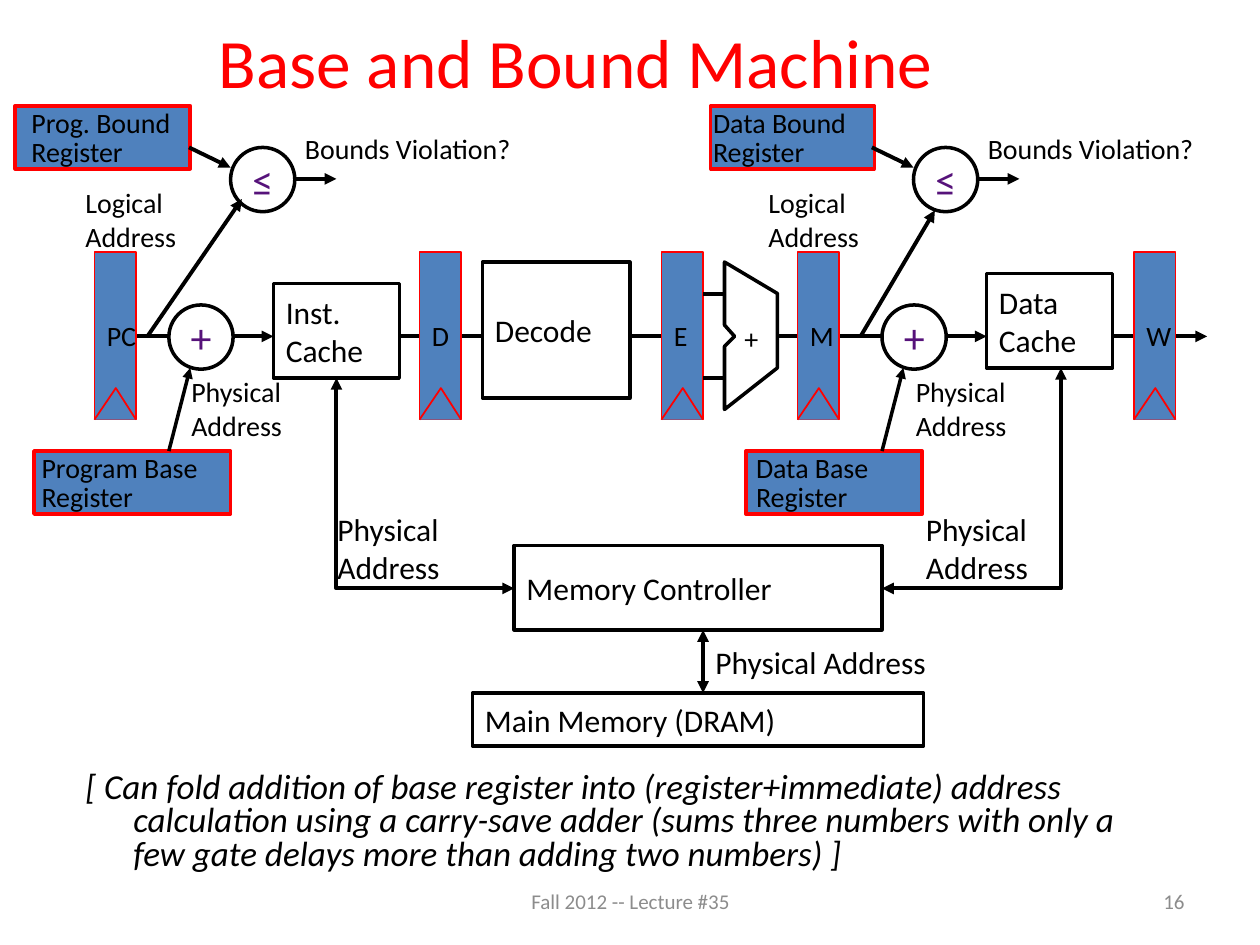
import pptx
import pptx.util
import pptx.dml.color
import pptx.enum.shapes
import pptx.enum.text
import pptx.oxml
import pptx.oxml.ns

Inches = pptx.util.Inches
Pt = pptx.util.Pt
KIND = pptx.enum.shapes.MSO_SHAPE
ANCHOR = pptx.enum.text.MSO_ANCHOR
ALIGN = pptx.enum.text.PP_ALIGN
BLACK, WHITE, RED, BLUE = "000000", "FFFFFF", "FF0000", "4F81BD"
PURPLE, GRAY = "56127A", "8C8C8C"


def color(code):
    return pptx.dml.color.RGBColor.from_string(code)


def write(shape, text, size, ink=BLACK, wrap=True, align=ALIGN.LEFT, anchor=ANCHOR.MIDDLE):
    frame = shape.text_frame
    frame.text = text
    frame.word_wrap = wrap
    frame.vertical_anchor = anchor
    para = frame.paragraphs[0]
    para.alignment = align
    font = para.runs[0].font
    font.name, font.size = "Calibri", Pt(size)
    font.color.rgb = color(ink)
    return para


def paint(shape, fill, line, width):
    shape.shadow.inherit = False
    if fill:
        shape.fill.solid()
        shape.fill.fore_color.rgb = color(fill)
    else:
        shape.fill.background()
    shape.line.color.rgb = color(line)
    shape.line.width = Pt(width)
    return shape


def area(box):
    return [Inches(n) for n in box]


def label(slide, box, text, size=16, **style):
    return write(slide.shapes.add_textbox(*area(box)), text, size, **style)


def tight(slide, box, text, wrap=True):
    shape = slide.shapes.add_textbox(*area(box))
    para = write(shape, text, 16, wrap=wrap, anchor=ANCHOR.TOP)
    frame = shape.text_frame
    frame.margin_left = frame.margin_right = Inches(0.08)
    frame.margin_top = frame.margin_bottom = Inches(0.04)
    return para


def block(slide, box, text="", fill=WHITE, line=BLACK, width=2, kind=KIND.RECTANGLE, **style):
    shape = paint(slide.shapes.add_shape(kind, *area(box)), fill, line, width)
    if text:
        style.setdefault("size", 18)
        write(shape, text, **style)
    return shape


def node(slide, x, y, sign):
    block(slide, (x, y, 0.51, 0.51), sign, kind=KIND.OVAL, size=24, ink=PURPLE, wrap=False)


def heads(shape, ends):
    line = shape.line._get_or_add_ln()
    for end in ends:
        tip = pptx.oxml.ns.qn("a:" + end)
        line.append(line.makeelement(tip, {"type": "triangle"}))


def wire(slide, start, stop, ends=("tailEnd",), width=2.25):
    link = slide.shapes.add_connector(
        pptx.enum.shapes.MSO_CONNECTOR.STRAIGHT, *area(start + stop))
    link.line.color.rgb = color(BLACK)
    link.line.width = Pt(width)
    heads(link, ends)
    props = link._element.spPr
    props.append(props.makeelement(pptx.oxml.ns.qn("a:effectLst"), {}))


def outline(slide, points, fill, line, width, close=False):
    spots = [area(spot) for spot in points]
    path = slide.shapes.build_freeform(*spots[0], scale=1.0)
    path.add_line_segments(spots[1:], close=close)
    return paint(path.convert_to_shape(), fill, line, width)


def stage(slide, x, y, name):
    block(slide, (x, y, 0.33, 1.33), name, BLUE, RED, 1, size=16, wrap=False)
    notch = [(x, y + 1.33), (x + 0.17, y + 1.08), (x + 0.33, y + 1.33)]
    outline(slide, notch, BLUE, RED, 1)


def adder(slide, x, y):
    points = [(0, 0), (0, 0.5), (0.08, 0.59), (0, 0.67), (0, 1.17), (0.42, 0.84), (0.42, 0.25)]
    outline(slide, [(x + dx, y + dy) for dx, dy in points], WHITE, BLACK, 2, True)
    for dy in (0.25, 0.92):
        wire(slide, (x - 0.17, y + dy), (x, y + dy), ())
    label(slide, (x + 0.06, y + 0.42, 0.38, 0.37), "+", wrap=False)


def register(slide, box, left, width, text):
    block(slide, box, fill=BLUE, line=RED)
    tight(slide, (left, box[1], width, 0.55), text).line_spacing = 0.85


def limit(slide, x, y):
    node(slide, x + 1.25, y + 0.33, "≤")
    wire(slide, (x + 0.92, y + 0.33), (x + 1.25, y + 0.49))
    wire(slide, (x + 1.75, y + 0.58), (x + 2.09, y + 0.58))
    label(slide, (x, y + 0.58, 1.22, 0.64), "Logical Address")
    tight(slide, (x + 1.76, y + 0.16, 1.97, 0.35), "Bounds Violation?", False)


def offset(slide, x, y, tip, gap):
    node(slide, x, y, "+")
    wire(slide, (x, y + 1.16), (x + 0.17, y + 0.5), width=2)
    wire(slide, (x - 0.17, y + 0.25), tip)
    label(slide, (x + gap, y + 0.5, 1.22, 0.64), "Physical Address")


def pipeline(slide, y):
    mid = y + 0.67
    wire(slide, (1.08, mid), (2.17, mid))
    wire(slide, (3.17, mid), (5.25, mid), ())
    wire(slide, (6.17, mid), (7.83, mid))
    wire(slide, (8.83, mid), (9.58, mid))
    for x, name in ((0.75, "PC"), (3.33, "D"), (5.25, "E"), (6.33, "M"), (9, "W")):
        stage(slide, x, y, name)
    block(slide, (2.17, y + 0.25, 1, 0.75), "Inst. Cache")
    block(slide, (3.83, y + 0.08, 1.17, 1.08), "Decode")
    block(slide, (7.83, y + 0.17, 1, 0.75), "Data Cache")
    adder(slide, 5.75, y + 0.08)


def memory(slide, x, y):
    block(slide, (x + 0.33, y, 2.92, 0.67), "Memory Controller")
    block(slide, (x, y + 1.17, 3.58, 0.42), "Main Memory (DRAM)")
    mid = y + 0.34
    for top, side, end in ((3, 2.67, x + 0.33), (2.92, 8.42, x + 3.25)):
        path = outline(slide, [(side, top), (side, mid), (end, mid)], None, BLACK, 2.25)
        heads(path, ("headEnd", "tailEnd"))
    wire(slide, (x + 1.83, y + 0.67), (x + 1.83, y + 1.17), ("headEnd", "tailEnd"))
    for box in ((2.58, y - 0.33, 1.22, 0.7), (7.25, y - 0.33, 1.22, 0.7),
                (x + 1.83, y + 0.72, 2.67, 0.4)):
        label(slide, box, "Physical Address", 18)


def remark(slide, box):
    text = ("[ Can fold addition of base register into (register+immediate) address "
            "calculation using a carry-save adder (sums three numbers with only a "
            "few gate delays more than adding two numbers) ]")
    para = label(slide, box, text, 20, anchor=ANCHOR.TOP)
    para.line_spacing = 0.8
    para.space_before = Pt(4)
    para.runs[0].font.italic = True
    props = para._p.get_or_add_pPr()
    props.set("marL", str(Inches(0.38)))
    props.set("indent", str(Inches(-0.38)))


def main():
    deck = pptx.Presentation()
    deck.slide_width, deck.slide_height = Inches(10), Inches(7.5)
    slide = deck.slides.add_slide(deck.slide_layouts[6])
    label(slide, (0.58, 0.08, 7.98, 0.81), "Base and Bound Machine", 39.6,
          ink=RED, align=ALIGN.CENTER)
    pipeline(slide, 2)
    memory(slide, 3.75, 4.33)
    register(slide, (0.12, 0.84, 1.39, 0.5), 0.17, 1.44, "Prog. Bound Register")
    register(slide, (5.64, 0.84, 1.3, 0.5), 5.58, 1.33, "Data Bound Register")
    register(slide, (0.27, 3.58, 1.56, 0.5), 0.25, 1.58, "Program Base Register")
    register(slide, (5.92, 3.58, 1.4, 0.5), 5.92, 1.42, "Data Base Register")
    for x in (0.58, 6):
        limit(slide, x, 0.84)
    offset(slide, 1.34, 2.42, (1.92, 1.58), 0.08)
    offset(slide, 7, 2.42, (7.42, 1.67), 0.17)
    remark(slide, (0.58, 6.08, 8.83, 0.92))
    label(slide, (3.42, 6.95, 3.17, 0.4), "Fall 2012 -- Lecture #35", 12,
          ink=GRAY, align=ALIGN.CENTER)
    label(slide, (7.17, 6.95, 2.33, 0.4), "16", 12, ink=GRAY, align=ALIGN.RIGHT)
    deck.save("out.pptx")


if __name__ == "__main__":
    main()
